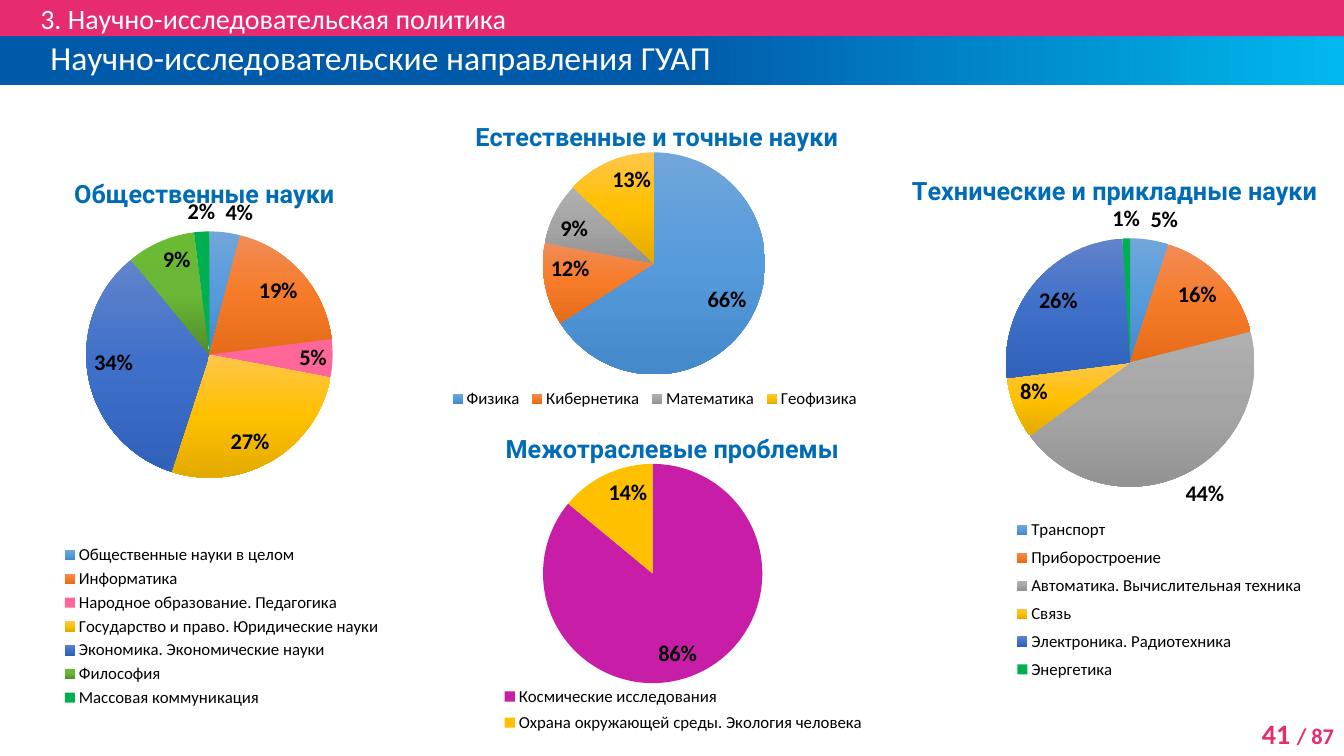
from copy import deepcopy

from lxml import etree
from pptx import Presentation
from pptx.chart.data import CategoryChartData
from pptx.dml.color import RGBColor
from pptx.enum.chart import XL_CHART_TYPE, XL_LABEL_POSITION, XL_LEGEND_POSITION
from pptx.enum.shapes import MSO_SHAPE
from pptx.enum.text import MSO_ANCHOR, PP_ALIGN
from pptx.oxml.ns import qn
from pptx.util import Inches, Pt

PIE = XL_CHART_TYPE.PIE
INSIDE = XL_LABEL_POSITION.INSIDE_END
OUTSIDE = XL_LABEL_POSITION.OUTSIDE_END
BOTTOM = XL_LEGEND_POSITION.BOTTOM
MIDDLE = MSO_ANCHOR.MIDDLE
LEFT, RIGHT = PP_ALIGN.LEFT, PP_ALIGN.RIGHT
RECT = MSO_SHAPE.RECTANGLE

BLACK = RGBColor(0, 0, 0)
WHITE = RGBColor(255, 255, 255)
RED = RGBColor(0xE7, 0x2B, 0x70)
NAVY = RGBColor(0x00, 0x5A, 0xAA)
CYAN = RGBColor(0x00, 0xB8, 0xEE)
HEAD = RGBColor(0x00, 0x6C, 0xB6)
PURPLE = RGBColor(0xC7, 0x1D, 0xA7)
GOLD = RGBColor(0xFF, 0xC0, 0x00)
PINK = RGBColor(0xFF, 0x66, 0x99)
GREEN = RGBColor(0x00, 0xB0, 0x50)


def shades(*codes):
    return [RGBColor.from_string(code) for code in codes]


# Vertical gradients: top, middle, bottom
SKY = shades("71A6DB", "559BDB", "448ACA")
ORANGE = shades("F18C57", "F67B28", "E56C19")
GREY = shades("AFAFAF", "A5A5A5", "939393")
AMBER = shades("FFC64B", "FFC000", "E3AB00")
BLUE = shades("6183CB", "3E70CA", "3062BB")
LEAF = shades("6ABA34", "6AB636", "518D2A")

# Boxes are in inches on the slide; "plot" is in fractions of the chart;
# "out" lists the slices labelled outside the pie
CHARTS = [
    dict(title="Межотраслевые проблемы", box=(3.47, 3.99, 5.96, 3.52),
         plot=(0.028, 0.174, 0.952, 0.618), head=(4.97, 4.24),
         legend=(4.88, 6.75, 3.8, 0.58), out=[],
         rows=[("Космические исследования", 86, PURPLE),
               ("Охрана окружающей среды. Экология человека", 14, GOLD)]),
    dict(title="Общественные науки", box=(-0.39, 1.64, 5.13, 5.42),
         plot=(0.057, 0.121, 0.848, 0.451), head=(0.69, 1.71),
         legend=(0.55, 5.37, 3.3, 1.69), out=[0, 6],
         rows=[("Общественные науки в целом", 4, SKY),
               ("Информатика", 19, ORANGE),
               ("Народное образование. Педагогика", 5, PINK),
               ("Государство и право. Юридические науки", 27, AMBER),
               ("Экономика. Экономические науки", 34, BLUE),
               ("Философия", 9, LEAF),
               ("Массовая коммуникация", 2, GREEN)]),
    dict(title="Естественные и точные науки", box=(3.93, 0.85, 5.06, 3.26),
         plot=(0.011, 0.203, 0.989, 0.676), head=(4.67, 1.15),
         legend=(4.42, 3.84, 4.15, 0.27), out=[],
         rows=[("Физика", 66, SKY), ("Кибернетика", 12, ORANGE),
               ("Математика", 9, GREY), ("Геофизика", 13, AMBER)]),
    dict(title="Технические и прикладные науки", box=(8.51, 1.43, 5.32, 6.07),
         plot=(0.07, 0.154, 0.875, 0.406), head=(9.0, 1.68),
         legend=(9.95, 5.08, 3.1, 1.74), out=[0, 2, 5],
         rows=[("Транспорт", 5, SKY), ("Приборостроение", 16, ORANGE),
               ("Автоматика. Вычислительная техника", 44, GREY),
               ("Связь", 8, AMBER), ("Электроника. Радиотехника", 26, BLUE),
               ("Энергетика", 1, GREEN)]),
]


def style(font, size, color, bold=False, name="Calibri"):
    font.name, font.size, font.bold = name, Pt(size), bold
    font.color.rgb = color


def blend(fill, colors, angle):
    """Fill with three evenly spaced gradient stops."""
    fill.gradient()
    fill.gradient_angle = angle
    last = fill.gradient_stops[1]._element
    last.addprevious(deepcopy(last))
    for i, (stop, color) in enumerate(zip(fill.gradient_stops, colors)):
        stop.position = i / 2
        stop.color.rgb = color


def place(part, index, spots):
    """Give a chart part a manual layout of x, y and perhaps w, h."""
    for old in part.findall(qn("c:layout")):
        part.remove(old)
    layout = etree.Element(qn("c:layout"))
    manual = etree.SubElement(layout, qn("c:manualLayout"))
    if index == 0:
        etree.SubElement(manual, qn("c:layoutTarget")).set("val", "inner")
    for key in ("xMode", "yMode"):
        etree.SubElement(manual, qn("c:" + key)).set("val", "edge")
    for key, spot in zip("xywh", spots):
        etree.SubElement(manual, qn("c:" + key)).set("val", f"{spot:.4f}")
    part.insert(index, layout)


def scale(spots, box):
    """Turn slide inches into fractions of the chart box."""
    left, top, width, height = box
    x, y, *size = spots
    return [(x - left) / width, (y - top) / height,
            *(part / whole for part, whole in zip(size, (width, height)))]


def add_pie(slide, title, box, plot, head, legend, out, rows):
    names, values, fills = zip(*rows)
    data = CategoryChartData()
    data.categories = names
    data.add_series("Series 1", values)
    chart = slide.shapes.add_chart(PIE, *map(Inches, box), data).chart
    style(chart.font, 10, BLACK)

    # Title and legend
    chart.has_title = True
    chart.chart_title.include_in_layout = False
    frame = chart.chart_title.text_frame
    frame.text = title
    style(frame.paragraphs[0].runs[0].font, 18, HEAD, True, "Roboto")
    chart.has_legend = True
    chart.legend.position = BOTTOM
    chart.legend.include_in_layout = False
    style(chart.legend.font, 12, BLACK)

    # Slices and labels
    series = chart.plots[0].series[0]
    labels = series.data_labels
    labels.show_percentage, labels.show_value = True, False
    labels.number_format, labels.number_format_is_linked = "0%", False
    labels.position = INSIDE
    style(labels.font, 16, BLACK, True)
    for i, color in enumerate(fills):
        point = series.points[i]
        point.format.line.fill.background()
        if isinstance(color, list):
            blend(point.format.fill, color, 270)
        else:
            point.format.fill.solid()
            point.format.fill.fore_color.rgb = color
        if i in out:
            style(point.data_label.font, 16, BLACK, True)
            point.data_label.position = OUTSIDE
    space = chart._chartSpace
    for label in space.xpath(".//c:dLbl"):
        label.find(qn("c:showVal")).set("val", "0")
        label.find(qn("c:showPercent")).set("val", "1")

    # Layout of the chart's parts
    place(space.xpath(".//c:plotArea")[0], 0, plot)
    place(space.xpath("./c:chart/c:title")[0], 1, scale(head, box))
    place(space.xpath(".//c:legend")[0], 1, scale(legend, box))


def set_band(shape, top, height, text, size, inset):
    shape.left, shape.top = 0, Inches(top)
    shape.width, shape.height = Inches(13.33), Inches(height)
    shape.line.fill.background()
    frame = shape.text_frame
    frame.text = text
    frame.word_wrap = True
    frame.vertical_anchor = MIDDLE
    frame.margin_left = Inches(inset)
    frame.margin_right = frame.margin_top = frame.margin_bottom = 0
    line = frame.paragraphs[0]
    line.alignment = LEFT
    style(line.runs[0].font, size, WHITE)
    return line


def add_page(slide):
    box = slide.shapes.add_textbox(
        Inches(12.13), Inches(7.06), Inches(1.2), Inches(0.44))
    box.text_frame.word_wrap = True
    line = box.text_frame.paragraphs[0]
    line.alignment = RIGHT
    for text, size in (("41 ", 20), ("/ 87", 16)):
        run = line.add_run()
        run.text = text
        style(run.font, size, RED, True)


def main():
    deck = Presentation()
    deck.slide_width, deck.slide_height = Inches(13.33), Inches(7.5)
    slide = deck.slides.add_slide(deck.slide_layouts[5])

    # Header bands
    band = slide.shapes.add_shape(RECT, 0, 0, Inches(1), Inches(1))
    band.shadow.inherit = False
    band.fill.solid()
    band.fill.fore_color.rgb = RED
    set_band(band, 0, 0.36, "3. Научно-исследовательская политика", 20, 0.4)
    title = slide.shapes.title
    line = set_band(title, 0.36, 0.48,
                    "Научно-исследовательские направления ГУАП", 24, 0.5)
    line.line_spacing = Pt(24)
    blend(title.fill, [NAVY, NAVY, CYAN], 0)

    # Pie charts and page number
    for item in CHARTS:
        add_pie(slide, **item)
    add_page(slide)
    deck.save("out.pptx")


if __name__ == "__main__":
    main()
